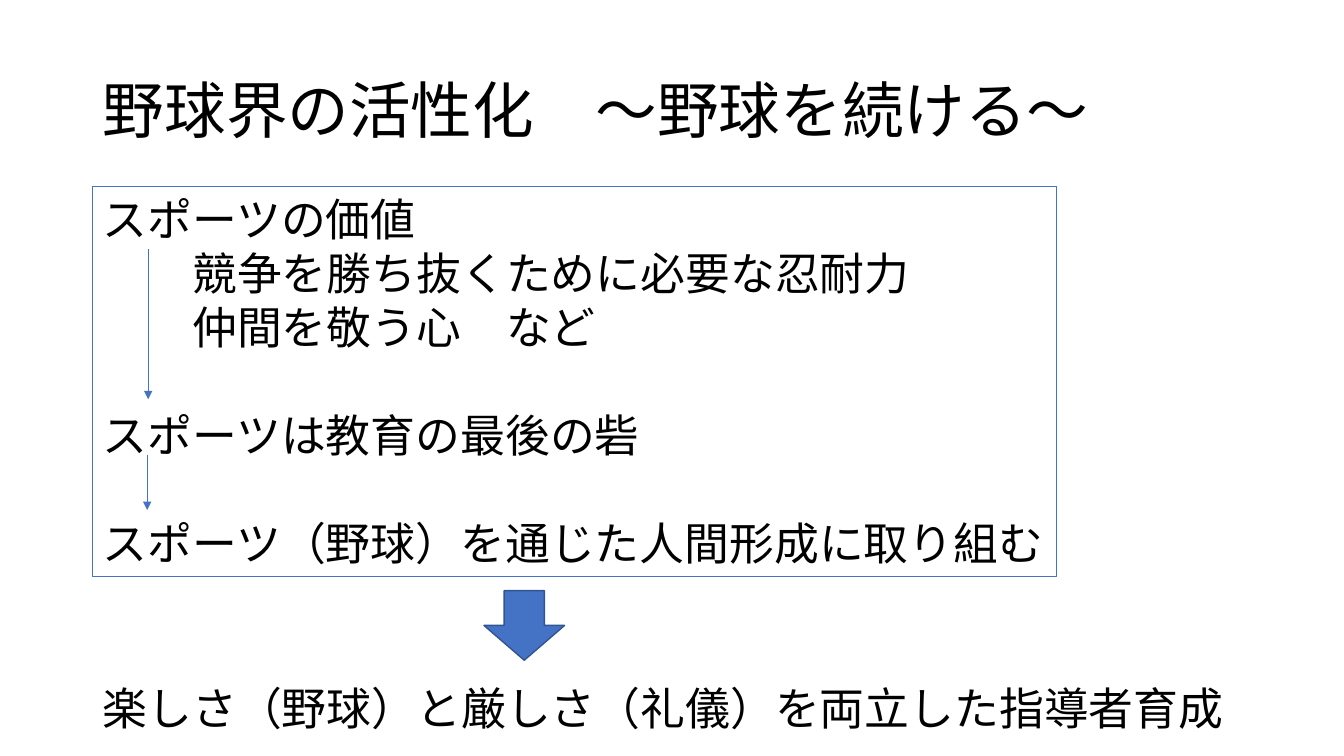
"""Build a slide on keeping baseball lively through the value of sport."""
from lxml.etree import SubElement
from pptx import Presentation
from pptx.dml.color import RGBColor
from pptx.enum.shapes import MSO_CONNECTOR, MSO_SHAPE
from pptx.enum.text import MSO_ANCHOR, MSO_AUTO_SIZE, PP_ALIGN
from pptx.oxml.ns import qn
from pptx.util import Inches, Pt

BLACK = RGBColor(0x00, 0x00, 0x00)
BLUE = RGBColor(0x44, 0x72, 0xC4)
DARK_BLUE = RGBColor(0x32, 0x54, 0x91)
FONT = "Noto Sans CJK JP"
LEFT = Inches(0.92)
BODY_SIZE = 32
LINE_PITCH = Pt(38.6)


def add_text(paragraph, text, size):
    paragraph.alignment = PP_ALIGN.LEFT
    run = paragraph.add_run()
    run.text = text
    run.font.size = Pt(size)
    run.font.name = FONT
    run.font.color.rgb = BLACK
    SubElement(run.font._element, qn("a:ea"), typeface=FONT)


presentation = Presentation()
presentation.slide_width = Inches(13.33)
presentation.slide_height = Inches(7.5)
slide = presentation.slides.add_slide(presentation.slide_layouts[5])
shapes = slide.shapes

title = shapes.title
title.left, title.top = LEFT, Inches(0.4)
title.width, title.height = Inches(11.5), Inches(1.45)
title.text_frame.auto_size = MSO_AUTO_SIZE.NONE
title.text_frame.vertical_anchor = MSO_ANCHOR.MIDDLE
title_paragraph = title.text_frame.paragraphs[0]
title_paragraph.line_spacing = 0.9
add_text(title_paragraph, "野球界の活性化\u3000〜野球を続ける〜".replace("\u3000", "　"), 44)

values_box = shapes.add_shape(MSO_SHAPE.RECTANGLE, LEFT, Inches(1.85), Inches(9.56), Inches(3.87))
values_box.shadow.inherit = False
values_box.fill.background()
values_box.line.color.rgb = BLUE
values_box.line.width = Pt(0.75)
values_frame = values_box.text_frame
values_frame.word_wrap = False
values_frame.vertical_anchor = MSO_ANCHOR.TOP

value_lines = [
    ("スポーツの価値", 0, 0),
    ("競争を勝ち抜くために必要な忍耐力", 2, 0),
    ("仲間を敬う心　など", 2, 0),
    ("スポーツは教育の最後の砦", 0, 1),
    ("スポーツ（野球）を通じた人間形成に取り組む", 0, 1),
]
for index, (text, indent, gap) in enumerate(value_lines):
    paragraph = values_frame.add_paragraph() if index else values_frame.paragraphs[0]
    paragraph.line_spacing = LINE_PITCH
    paragraph.space_before = LINE_PITCH * gap
    add_text(paragraph, text, BODY_SIZE)
    paragraph._p.get_or_add_pPr().set("marL", str(Pt(BODY_SIZE) * indent))

down_arrow = shapes.add_shape(MSO_SHAPE.DOWN_ARROW, Inches(4.8), Inches(5.86), Inches(0.8), Inches(0.69))
down_arrow.shadow.inherit = False
down_arrow.fill.solid()
down_arrow.fill.fore_color.rgb = BLUE
down_arrow.line.color.rgb = DARK_BLUE
down_arrow.line.width = Pt(1)

conclusion = shapes.add_textbox(LEFT, Inches(6.7), Inches(11.87), Inches(0.64))
conclusion.text_frame.word_wrap = True
conclusion_paragraph = conclusion.text_frame.paragraphs[0]
conclusion_paragraph.line_spacing = LINE_PITCH
add_text(conclusion_paragraph, "楽しさ（野球）と厳しさ（礼儀）を両立した指導者育成", BODY_SIZE)

for x, start, end in [(1.47, 2.47, 3.96), (1.46, 4.51, 5.06)]:
    step_arrow = shapes.add_connector(
        MSO_CONNECTOR.STRAIGHT, Inches(x), Inches(start), Inches(x), Inches(end)
    )
    step_arrow.line.color.rgb = BLUE
    step_arrow.line.width = Pt(0.5)
    SubElement(step_arrow.line._get_or_add_ln(), qn("a:tailEnd"), type="triangle")
    SubElement(step_arrow._element.spPr, qn("a:effectLst"))

presentation.save("out.pptx")
